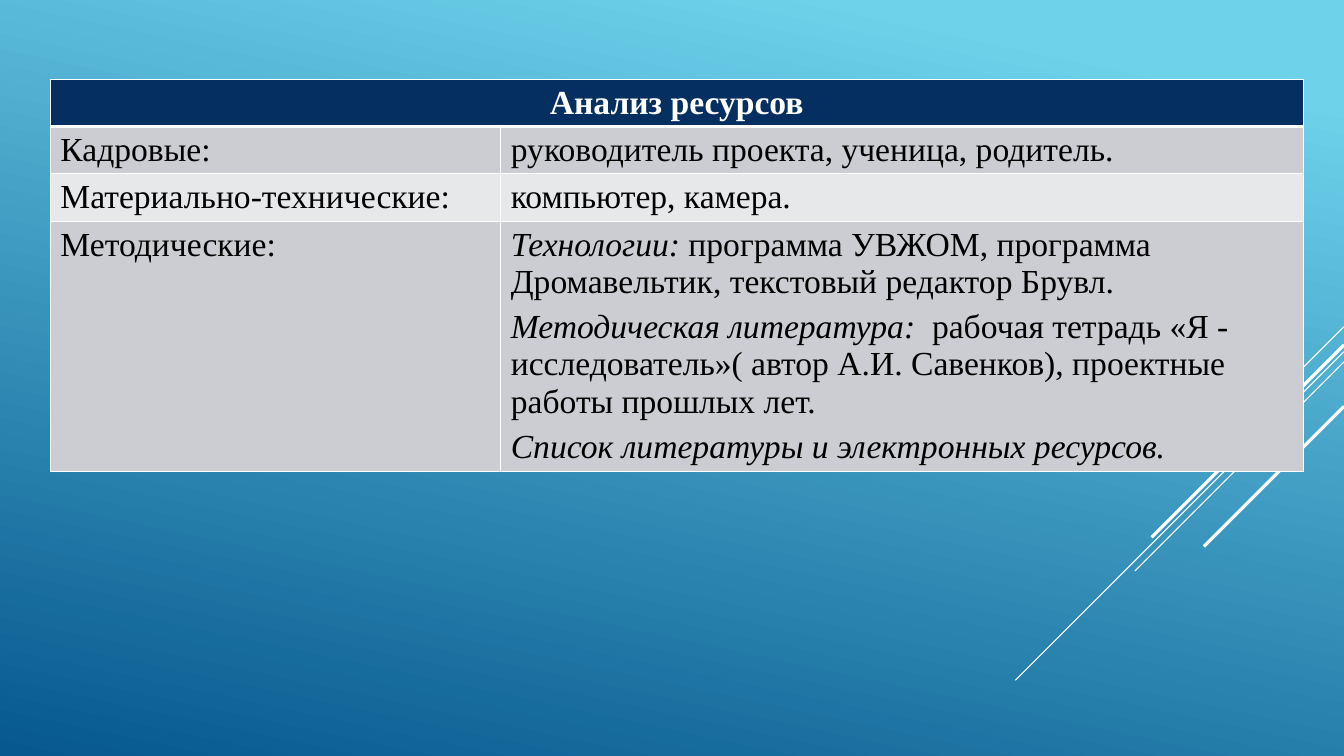
from pptx import Presentation
from pptx.dml.color import RGBColor
from pptx.enum.text import PP_ALIGN
from pptx.oxml import parse_xml
from pptx.oxml.ns import nsdecls
from pptx.util import Cm, Pt

CENTER = PP_ALIGN.CENTER
FONT = "Times New Roman"
COLORS = {"white": "FFFFFF", "black": "000000", "head": "052F61",
          "dark": "CCCDD2", "light": "E7E8EA", "sky": "6ED2EB", "deep": "06588E"}
EDGE = 33.87
RAYS = [(8.23, 2.54, 0.75), (8.86, 8.28, 0.75), (9.12, 5.27, 0.75),
        (8.69, 4.85, 2.25), (10.24, 3.53, 2.25)]
HEAD = "Анализ ресурсов"
ROWS = [
    ("Кадровые:", [[("руководитель проекта, ученица, родитель.", False)]]),
    ("Материально-технические:", [[("компьютер, камера.", False)]]),
    ("Методические:", [
        [("Технологии:", True),
         (" программа УВЖОМ, программа Дромавельтик, текстовый редактор Брувл.", False)],
        [("Методическая литература:  ", True),
         ("рабочая тетрадь «Я - исследователь»( автор А.И. Савенков), "
          "проектные работы прошлых лет.", False)],
        [("Список литературы и электронных ресурсов.", True)]]),
]
WIDTHS = [11.35, 20.22]
HEIGHTS = [1.18, 1.19, 1.19, 6.3]


def color(name):
    """Return the named colour."""
    return RGBColor.from_string(COLORS[name])


def paint_back(slide):
    """Fill the background with a slanted gradient."""
    fill = slide.background.fill
    fill.gradient()
    fill.gradient_angle = 258
    for stop, (name, place) in zip(fill.gradient_stops, [("sky", 0.1), ("deep", 1)]):
        stop.color.rgb = color(name)
        stop.position = place


def add_ray(slide, top, span, width):
    """Draw a diagonal line down and left from the right edge."""
    ray = slide.shapes.add_connector(
        1, Cm(EDGE), Cm(top), Cm(EDGE - span), Cm(top + span))
    ray.line.color.rgb = color("white")
    ray.line.width = Pt(width)
    ray._element.spPr.append(parse_xml(f"<a:effectLst {nsdecls('a')}/>"))


def style_cell(cell, fill, base=1):
    """Give a cell white borders and a solid fill."""
    props = cell._tc.get_or_add_tcPr()
    for side, width in (("L", 1), ("R", 1), ("T", 1), ("B", base)):
        props.append(parse_xml(
            f'<a:ln{side} {nsdecls("a")} w="{Pt(width)}"><a:solidFill>'
            f'<a:srgbClr val="{COLORS["white"]}"/></a:solidFill></a:ln{side}>'))
    cell.fill.solid()
    cell.fill.fore_color.rgb = color(fill)


def write_cell(cell, paras, tint="black", bold=False, after=0, align=None):
    """Write paragraphs made of (text, italic) runs."""
    frame = cell.text_frame
    for i, runs in enumerate(paras):
        para = frame.add_paragraph() if i else frame.paragraphs[0]
        para.space_after = Pt(after)
        para.alignment = align
        font = para.font
        font.name, font.size, font.bold = FONT, Pt(24), bold
        font.color.rgb = color(tint)
        for text, slant in runs:
            run = para.add_run()
            run.text = text
            run.font.name, run.font.size, run.font.bold = FONT, Pt(24), bold
            run.font.italic = slant
            run.font.color.rgb = color(tint)


def add_grid(slide):
    """Add the table of resources."""
    grid = slide.shapes.add_table(
        len(HEIGHTS), len(WIDTHS), Cm(1.27), Cm(2), Cm(sum(WIDTHS)), Cm(sum(HEIGHTS))).table
    for col, width in zip(grid.columns, WIDTHS):
        col.width = Cm(width)
    for row, height in zip(grid.rows, HEIGHTS):
        row.height = Cm(height)
    for cell in grid.rows[0].cells:
        style_cell(cell, "head", 3)
    grid.cell(0, 0).merge(grid.cell(0, 1))
    write_cell(grid.cell(0, 0), [[(HEAD, False)]], "white", True, align=CENTER)
    for i, (label, paras) in enumerate(ROWS, 1):
        name, body = grid.rows[i].cells
        for cell in (name, body):
            style_cell(cell, "dark" if i % 2 else "light")
        write_cell(name, [[(label, False)]])
        write_cell(body, paras, after=6)


def main():
    """Build and save the slide."""
    deck = Presentation()
    deck.slide_width, deck.slide_height = Cm(EDGE), Cm(19.05)
    slide = deck.slides.add_slide(deck.slide_layouts[6])
    paint_back(slide)
    for ray in RAYS:
        add_ray(slide, *ray)
    add_grid(slide)
    deck.save("out.pptx")


if __name__ == "__main__":
    main()
